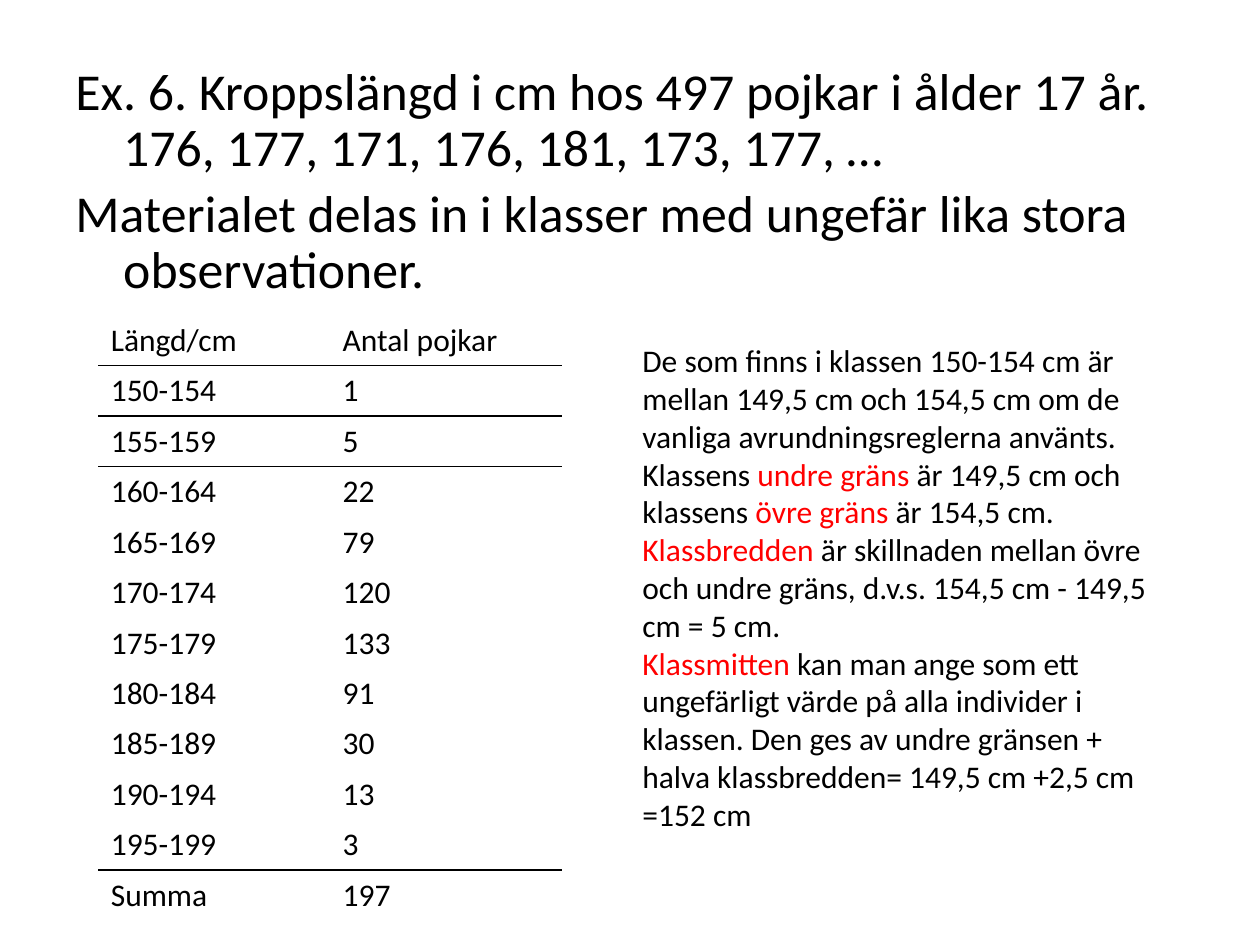
import pptx
import pptx.dml.color
import pptx.oxml.ns
import pptx.util
from lxml import etree

Inches = pptx.util.Inches
Pt = pptx.util.Pt
BLACK = pptx.dml.color.RGBColor(0, 0, 0)
RED = pptx.dml.color.RGBColor(0xFF, 0, 0)
FONT = "Calibri"
NO_STYLE_NO_GRID = "{2D5ABB26-0587-4C30-8999-92F81FD0307C}"

INTRO = [
    "Ex. 6. Kroppslängd i cm hos 497 pojkar i ålder 17 år. "
    "176, 177, 171, 176, 181, 173, 177, …",
    "Materialet delas in i klasser med ungefär lika stora observationer.",
]
COUNTS = [1, 5, 22, 79, 120, 133, 91, 30, 13, 3]
ROWS = [
    ("Längd/cm", "Antal pojkar"),
    *((f"{low}-{low + 4}", str(n)) for low, n in zip(range(150, 200, 5), COUNTS)),
    ("Summa", "197"),
]
RULED_ROWS = {0, 1, len(ROWS) - 2}
# Each paragraph is a list of (text, colour) runs.
EXPLANATION = [
    [("De som finns i klassen 150-154 cm är mellan 149,5 cm och 154,5 cm "
      "om de vanliga avrundningsreglerna använts.", BLACK)],
    [("Klassens ", BLACK), ("undre gräns ", RED),
     ("är 149,5 cm och klassens ", BLACK), ("övre gräns ", RED),
     ("är 154,5 cm.", BLACK)],
    [("Klassbredden", RED),
     (" är skillnaden mellan övre och undre gräns, d.v.s. "
      "154,5 cm - 149,5 cm = 5 cm.", BLACK)],
    [("Klassmitten", RED),
     (" kan man ange som ett ungefärligt värde på alla individer i klassen. "
      "Den ges av undre gränsen + halva klassbredden= 149,5 cm +2,5 cm =152 cm",
      BLACK)],
]


def add_run(p, text, size=18, color=BLACK):
    r = p.add_run()
    r.text = text
    r.font.name = FONT
    r.font.size = Pt(size)
    r.font.color.rgb = color


def add_border(cell, side):
    """Draw a thin black line on one side of a cell, 'T' or 'B'."""
    qn = pptx.oxml.ns.qn
    tc_pr = cell._tc.get_or_add_tcPr()
    ln = etree.SubElement(tc_pr, qn(f"a:ln{side}"), w=str(Pt(1)))
    fill = etree.SubElement(ln, qn("a:solidFill"))
    etree.SubElement(fill, qn("a:srgbClr"), val=str(BLACK))


class SlideBuilder:
    def __init__(self, slide):
        self.s = slide

    def text(self, left, top, width, height, paragraphs, size=18,
             hanging=0, line_spacing=None, space_before=0):
        sp = self.s.shapes.add_textbox(
            Inches(left), Inches(top), Inches(width), Inches(height))
        tf = sp.text_frame
        tf.word_wrap = True
        for i, runs in enumerate(paragraphs):
            p = tf.add_paragraph() if i else tf.paragraphs[0]
            p.line_spacing = line_spacing
            p.space_before = Pt(space_before)
            if hanging:
                p_pr = p._p.get_or_add_pPr()
                p_pr.set("marL", str(Inches(hanging)))
                p_pr.set("indent", str(-Inches(hanging)))
            for text, color in runs:
                add_run(p, text, size=size, color=color)

    def table(self, left, top, col_width, row_height, rows, ruled_rows):
        """Add a plain table with a line below each row in ruled_rows."""
        n_rows, n_cols = len(rows), len(rows[0])
        table = self.s.shapes.add_table(
            n_rows, n_cols, Inches(left), Inches(top),
            Inches(col_width * n_cols), Inches(row_height * n_rows)).table
        table.first_row = table.horz_banding = False
        style = table._tbl.tblPr.find(pptx.oxml.ns.qn("a:tableStyleId"))
        style.text = NO_STYLE_NO_GRID
        for i, row in enumerate(rows):
            for j, text in enumerate(row):
                cell = table.cell(i, j)
                add_run(cell.text_frame.paragraphs[0], text)
                if i - 1 in ruled_rows:
                    add_border(cell, "T")
                if i in ruled_rows:
                    add_border(cell, "B")
                cell.fill.background()


def main():
    prs = pptx.Presentation()
    prs.slide_width, prs.slide_height = Inches(10), Inches(7.5)
    slide = SlideBuilder(prs.slides.add_slide(prs.slide_layouts[6]))
    slide.text(0.5, 0.47, 9, 2.19, [[(text, BLACK)] for text in INTRO],
               size=29.6, hanging=0.38, line_spacing=0.9, space_before=6)
    slide.table(0.78, 2.5, 1.84, 0.4, ROWS, RULED_ROWS)
    slide.text(5, 2.66, 4.22, 4.04, EXPLANATION)
    prs.save("out.pptx")


if __name__ == "__main__":
    main()
